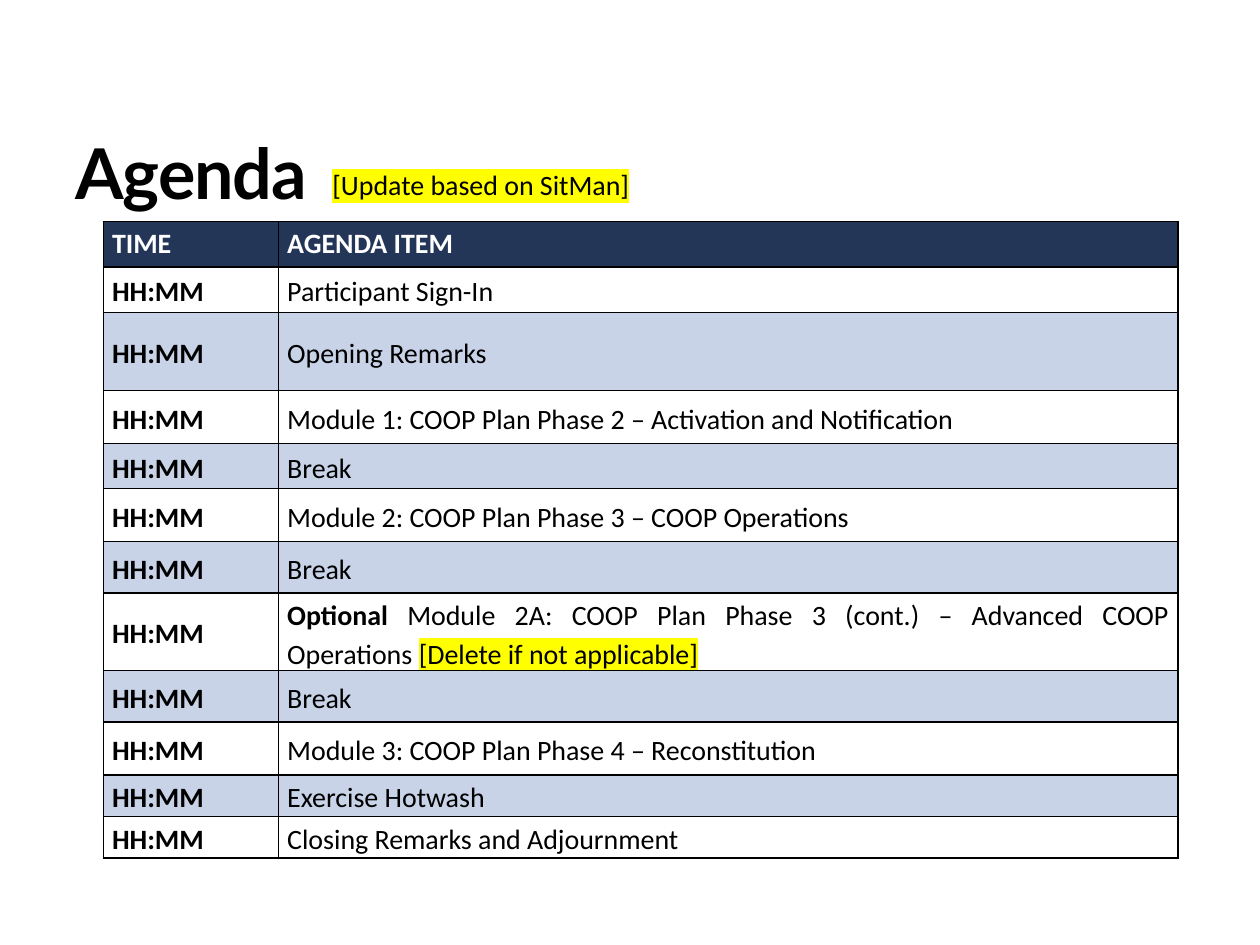
from dataclasses import dataclass

import lxml.etree
import pptx
import pptx.dml.color
import pptx.enum.text
import pptx.oxml.ns
import pptx.util

Inches = pptx.util.Inches
Pt = pptx.util.Pt
ALIGN = pptx.enum.text.PP_ALIGN
ANCHOR = pptx.enum.text.MSO_ANCHOR
qn = pptx.oxml.ns.qn


@dataclass(frozen=True)
class Theme:
    text: str = "000000"
    header_text: str = "FFFFFF"
    header_fill: str = "243658"
    band_fill: str = "C8D3E8"
    highlight: str = "FFFF00"
    border: str = "000000"
    title_font: str = "Lato"
    body_font: str = "Calibri"
    title_size: int = 40
    body_size: int = 16
    border_width: int = 1


THEME = Theme()

COLUMN_WIDTHS = [1.39, 7.14]
HEADER = ("TIME", "AGENDA ITEM")
HEADER_HEIGHT = 0.36
TIME = "HH:MM"
# Row height, then the item as (text, format) runs
AGENDA = [
    (0.36, [("Participant Sign-In", {})]),
    (0.62, [("Opening Remarks", {})]),
    (0.42, [("Module 1: COOP Plan Phase 2 – Activation and Notification", {})]),
    (0.36, [("Break", {})]),
    (0.42, [("Module 2: COOP Plan Phase 3 – COOP Operations", {})]),
    (0.41, [("Break", {})]),
    (0.42, [("Optional", {"bold": True}),
            (" Module 2A: COOP Plan Phase 3 (cont.) – Advanced COOP Operations ", {}),
            ("[Delete if not applicable]", {"highlight": THEME.highlight})]),
    (0.41, [("Break", {})]),
    (0.42, [("Module 3: COOP Plan Phase 4 – Reconstitution", {})]),
    (0.33, [("Exercise Hotwash", {})]),
    (0.33, [("Closing Remarks and Adjournment", {})]),
]


def rgb(color):
    return pptx.dml.color.RGBColor.from_string(color)


def add_run(p, text, font=THEME.body_font, size=THEME.body_size, color=THEME.text,
            bold=False, highlight=None, spacing=None):
    """Add a formatted run; spacing is the letter spacing in points."""
    r = p.add_run()
    r.text = text
    r.font.name = font
    r.font.size = Pt(size)
    r.font.bold = bold
    r.font.color.rgb = rgb(color)
    rPr = r._r.get_or_add_rPr()
    if spacing is not None:
        rPr.set("spc", str(round(spacing * 100)))
    if highlight:
        mark = lxml.etree.Element(qn("a:highlight"))
        lxml.etree.SubElement(mark, qn("a:srgbClr"), val=highlight)
        rPr.find(qn("a:solidFill")).addnext(mark)


def add_text_box(slide, left, top, width, height, text, wrap=True,
                 anchor=ANCHOR.TOP, line_spacing=None, **text_format):
    box = slide.shapes.add_textbox(Inches(left), Inches(top), Inches(width), Inches(height))
    tf = box.text_frame
    tf.word_wrap = wrap
    tf.vertical_anchor = anchor
    p = tf.paragraphs[0]
    p.line_spacing = line_spacing
    add_run(p, text, **text_format)


def set_borders(cell):
    tcPr = cell._tc.get_or_add_tcPr()
    for i, side in enumerate(("a:lnL", "a:lnR", "a:lnT", "a:lnB")):
        ln = lxml.etree.Element(qn(side), w=str(Pt(THEME.border_width)))
        fill = lxml.etree.SubElement(ln, qn("a:solidFill"))
        lxml.etree.SubElement(fill, qn("a:srgbClr"), val=THEME.border)
        tcPr.insert(i, ln)


def fill_cell(cell, runs, fill=None, anchor=ANCHOR.MIDDLE):
    cell.margin_left = cell.margin_right = Inches(0.07)
    cell.margin_top = cell.margin_bottom = 0
    cell.vertical_anchor = anchor
    if fill:
        cell.fill.solid()
        cell.fill.fore_color.rgb = rgb(fill)
    else:
        cell.fill.background()
    set_borders(cell)
    p = cell.text_frame.paragraphs[0]
    p.alignment = ALIGN.JUSTIFY
    p.line_spacing = 1.15
    for text, text_format in runs:
        add_run(p, text, **text_format)


def add_agenda_table(slide, left, top):
    heights = [HEADER_HEIGHT] + [height for height, _ in AGENDA]
    table = slide.shapes.add_table(
        len(heights), len(COLUMN_WIDTHS), Inches(left), Inches(top),
        Inches(sum(COLUMN_WIDTHS)), Inches(sum(heights))).table
    for column, width in zip(table.columns, COLUMN_WIDTHS):
        column.width = Inches(width)
    for row, height in zip(table.rows, heights):
        row.height = Inches(height)

    for col, label in enumerate(HEADER):
        fill_cell(table.cell(0, col), [(label, {"bold": True, "color": THEME.header_text})],
                  fill=THEME.header_fill, anchor=ANCHOR.TOP)
    for row, (_, item) in enumerate(AGENDA, start=1):
        fill = THEME.band_fill if row % 2 == 0 else None
        fill_cell(table.cell(row, 0), [(TIME, {"bold": True})], fill)
        fill_cell(table.cell(row, 1), item, fill)


def main():
    prs = pptx.Presentation()
    prs.slide_width = Inches(10)
    prs.slide_height = Inches(7.5)
    slide = prs.slides.add_slide(prs.slide_layouts[6])
    add_text_box(slide, 0.5, 0.98, 9.17, 0.85, "Agenda", anchor=ANCHOR.MIDDLE,
                 line_spacing=0.9, font=THEME.title_font, size=THEME.title_size,
                 bold=True, spacing=-0.6)
    add_agenda_table(slide, 0.82, 1.76)
    add_text_box(slide, 2.54, 1.28, 2.58, 0.37, "[Update based on SitMan]",
                 wrap=False, highlight=THEME.highlight)
    prs.save("out.pptx")


if __name__ == "__main__":
    main()
